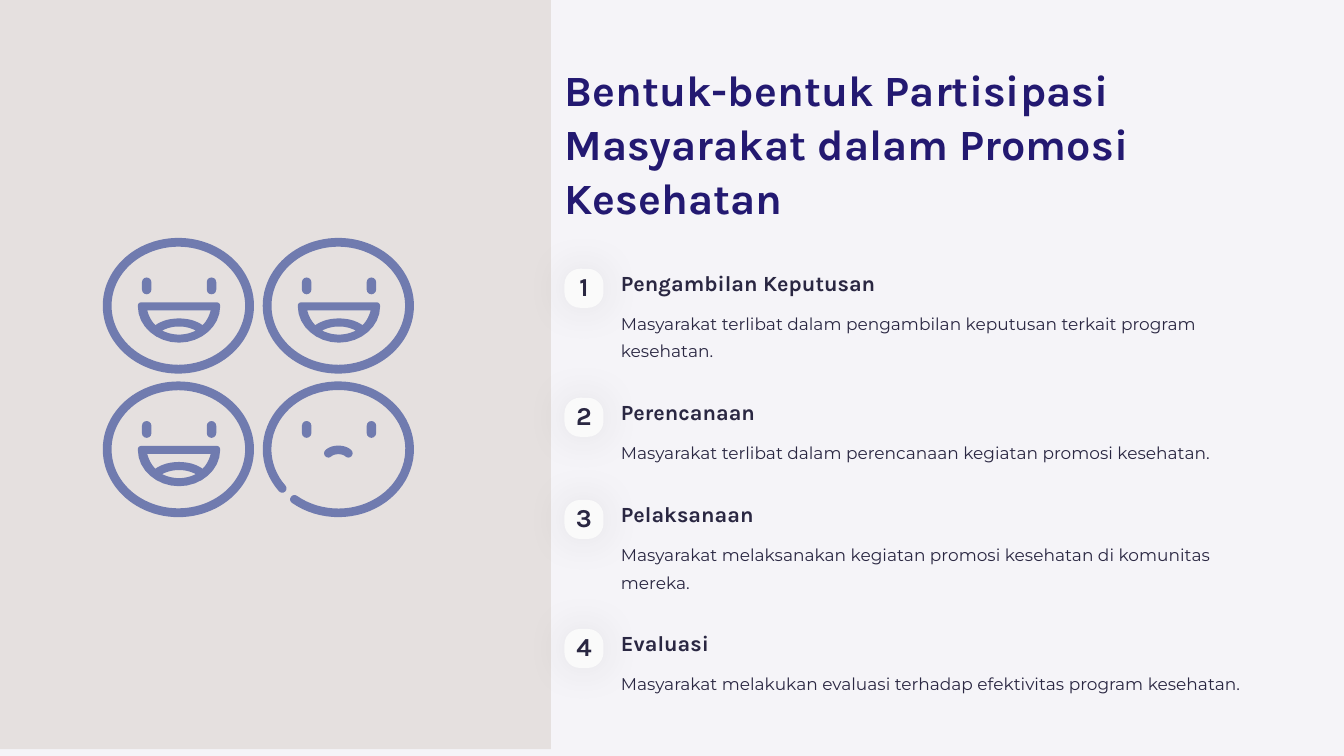
from math import cos, sin, atan2, pi, radians
from lxml.etree import SubElement
from pptx import Presentation
from pptx.dml.color import RGBColor
from pptx.enum.shapes import MSO_SHAPE as Kind
from pptx.enum.text import MSO_ANCHOR as Anchor, MSO_AUTO_SIZE as Fit, PP_ALIGN as Align
from pptx.oxml.ns import qn
from pptx.util import Inches, Pt

PAGE, PANEL, BADGE = "F5F4F8", "E5E0DF", "FAFAFA"
NAVY, INK, BLUE = "231971", "2A2742", "707BAF"
CELL = 0.1  # the slide is a grid of 100 columns, with square cells

TITLE = "Bentuk-bentuk Partisipasi Masyarakat dalam Promosi Kesehatan"
# heading, text, lines kept for the text
ITEMS = [
    ("Pengambilan Keputusan",
     "Masyarakat terlibat dalam pengambilan keputusan terkait program kesehatan.", 2),
    ("Perencanaan",
     "Masyarakat terlibat dalam perencanaan kegiatan promosi kesehatan.", 1),
    ("Pelaksanaan",
     "Masyarakat melaksanakan kegiatan promosi kesehatan di komunitas mereka.", 2),
    ("Evaluasi",
     "Masyarakat melakukan evaluasi terhadap efektivitas program kesehatan.", 1),
]

# Smile outlines on a face of 112 by 101 parts: a start, then Bézier curves
SMILE = [
    [(29, 48), (27, 48, 26, 49, 26, 51), (26, 66, 40, 78, 56.5, 78),
     (73, 78, 87, 66, 87, 51), (87, 49, 86, 48, 84, 48)],
    [(80, 54), (79, 58, 77, 62, 74, 65), (69, 61.5, 63, 60, 56.5, 60),
     (50, 60, 44, 61.5, 39, 65), (36, 62, 34, 58, 33, 54)],
    [(56.5, 66), (61, 66, 65, 67, 69, 69), (65, 71, 61, 72, 56.5, 72),
     (52, 72, 48, 71, 44, 69), (48, 67, 52, 66, 56.5, 66)],
]


def grid(*cells):
    return [Inches(n * CELL) for n in cells]


def color(text):
    return RGBColor.from_string(text)


def paint(shape, fill):
    shape.shadow.inherit = False
    shape.fill.solid()
    shape.fill.fore_color.rgb = color(fill)
    shape.line.fill.background()
    return shape


def write(shape, text, size, face, ink, step, bold=False, align=Align.LEFT, anchor=Anchor.TOP):
    frame = shape.text_frame
    frame.margin_left = frame.margin_right = frame.margin_top = frame.margin_bottom = 0
    frame.word_wrap, frame.auto_size = True, Fit.NONE
    frame.vertical_anchor = anchor
    frame.text = text
    para = frame.paragraphs[0]
    para.alignment, para.line_spacing = align, Pt(step)
    para.space_before = Pt(0)
    font = para.font
    font.size, font.name, font.bold = Pt(size), face, bold
    font.color.rgb = color(ink)


def glow(shape):
    """Add a soft, even shadow."""
    effects = shape._element.spPr.find(qn("a:effectLst"))
    outer = SubElement(effects, qn("a:outerShdw"), blurRad=str(Pt(22.2)), dist="0", dir="0",
                       algn="ctr", rotWithShape="0")
    tint = SubElement(outer, qn("a:srgbClr"), val="333333")
    SubElement(tint, qn("a:alpha"), val="10000")


def curve(outline, count=8):
    """Turn a start and its Bézier curves into points."""
    points = [outline[0]]
    for a, b, c, d, e, f in outline[1:]:
        x, y = points[-1]
        for k in range(1, count + 1):
            t = k / count
            s = 1 - t
            points.append((s**3 * x + 3 * s * s * t * a + 3 * s * t * t * c + t**3 * e,
                           s**3 * y + 3 * s * s * t * b + 3 * s * t * t * d + t**3 * f))
    return points


def band(x, y, wide, high, start, end, half, count=72):
    """Points around an elliptic arc of even thickness with round ends."""
    angles = [radians(start + (end - start) * k / count) for k in range(count + 1)]
    spots = [(x + wide * cos(a), y + high * sin(a), atan2(wide * sin(a), high * cos(a)))
             for a in angles]

    def off(spot, turn):
        return spot[0] + half * cos(spot[2] + turn), spot[1] + half * sin(spot[2] + turn)

    turns = [pi * k / 8 for k in range(1, 8)]
    return ([off(s, 0) for s in spots] + [off(spots[-1], t) for t in turns]
            + [off(s, pi) for s in reversed(spots)] + [off(spots[0], pi + t) for t in turns])


def draw_face(shapes, left, top, wide, high, happy):
    def place(x, y):
        return Inches((left + wide * x / 112) * CELL), Inches((top + high * y / 101) * CELL)

    def preset(kind, x, y, w, h, adj):
        shape = shapes.add_shape(kind, *place(x, y), *grid(wide * w / 112, high * h / 101))
        shape.adjustments[0] = adj
        paint(shape, BLUE)

    def trace(outlines):
        first, *rest = [[place(*p) for p in line] for line in outlines]
        pen = shapes.build_freeform(*first[0], scale=1.0)
        pen.add_line_segments(first[1:], close=True)
        for line in rest:
            pen.move_to(*line[0])
            pen.add_line_segments(line[1:], close=True)
        paint(pen.convert_to_shape(), BLUE)

    for x in (29, 77):
        preset(Kind.ROUNDED_RECTANGLE, x, 29.5, 7, 12.5, 0.5)
    if happy:
        preset(Kind.DONUT, 0, 0, 112, 101, 0.065)
        trace([curve(line) for line in SMILE])
    else:
        trace([band(56, 50.5, 52.8, 47.3, 142, 488, 3.2)])
        trace([band(56, 56, 8.5, 5, 210, 330, 3.2, 16)])


def draw_panel(slide, left, top, wide, high):
    paint(slide.shapes.add_shape(Kind.RECTANGLE, *grid(left, top, wide, high)), PANEL)
    group = slide.shapes.add_group_shape()
    for row in range(2):
        for col in range(2):
            draw_face(group.shapes, left + 7.85 + 11.9 * col, top + 18.2 + 10.68 * row,
                      11.25, 10.1, happy=row * col == 0)


def draw_item(slide, number, head, body, left, top, wide, lines):
    shapes = slide.shapes
    badge = paint(shapes.add_shape(Kind.ROUNDED_RECTANGLE, *grid(left, top, 2.9, 2.9)), BADGE)
    badge.adjustments[0] = 0.4
    glow(badge)
    write(badge, str(number), 13.8, "Karla", INK, 13.8, True, Align.CENTER, Anchor.MIDDLE)
    inset = 4.2
    box = shapes.add_textbox(*grid(left + inset, top, wide - inset, 2))
    write(box, head, 11.6, "Karla", INK, 14.4, True)
    box = shapes.add_textbox(*grid(left + inset, top + 2.8, wide - inset, 2.05 * lines))
    write(box, body, 9.1, "Montserrat", INK, 14.7)


def draw_list(slide, left, top, wide):
    for number, (head, body, lines) in enumerate(ITEMS, 1):
        draw_item(slide, number, head, body, left, top, wide, lines)
        top += 5.6 + 2 * lines


def draw_title(slide, left, top, wide, high):
    title = slide.shapes.title
    title.left, title.top, title.width, title.height = grid(left, top, wide, high)
    write(title, TITLE, 23.1, "Karla", NAVY, 28.8, True)


def main():
    deck = Presentation()
    deck.slide_width, deck.slide_height = grid(100, 56.25)
    slide = deck.slides.add_slide(deck.slide_layouts[5])
    back = slide.background.fill
    back.solid()
    back.fore_color.rgb = color(PAGE)
    draw_panel(slide, -0.2, -0.5, 41.2, 56.25)
    draw_title(slide, 42, 4.6, 53.5, 12.1)
    draw_list(slide, 42, 20, 53.5)
    deck.save("out.pptx")


if __name__ == "__main__":
    main()
